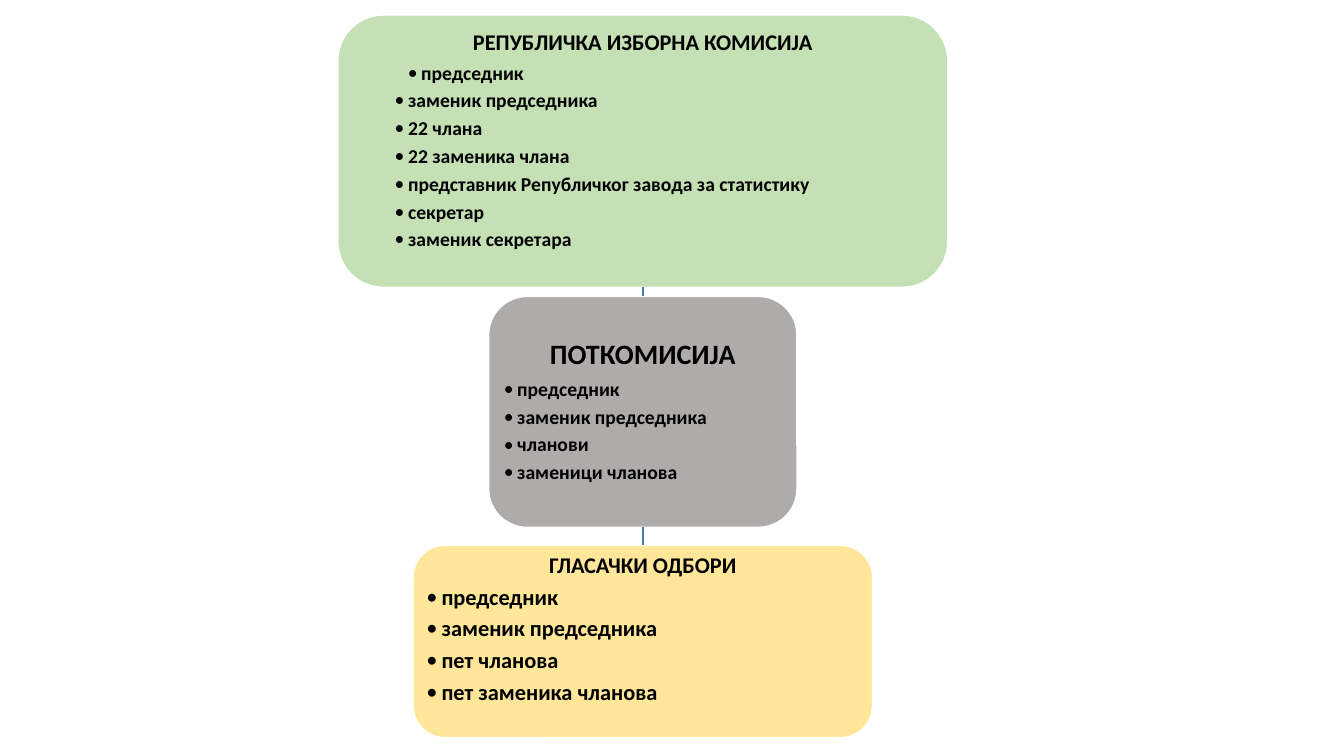
from dataclasses import dataclass
from pptx import Presentation
from pptx.dml.color import RGBColor
from pptx.enum.shapes import MSO_CONNECTOR as CONN, MSO_SHAPE as SHAPE
from pptx.enum.text import MSO_ANCHOR as ANCHOR, PP_ALIGN as ALIGN
from pptx.oxml.ns import qn
from pptx.util import Cm, Pt
from lxml.etree import SubElement


@dataclass(frozen=True)
class Theme:
    font: str = "Calibri"
    text: str = "000000"
    outline: str = "FFFFFF"
    link: str = "497CAB"
    commission: str = "C5E0B4"
    subcommission: str = "AFABAB"
    boards: str = "FFE699"
    small: int = 14
    medium: int = 16
    large: int = 20


THEME = Theme()
AXIS = 16.2  # shared centre line of the chart, in cm


def rgb(value):
    return RGBColor.from_string(value)


def format_paragraph(p, size, align):
    p.alignment = align
    p.line_spacing = 0.9
    p.space_after = Pt(round(size * 0.335, 1))
    for r in p.runs:
        r.font.name = THEME.font
        r.font.size = Pt(size)
        r.font.bold = True
        r.font.color.rgb = rgb(THEME.text)


def add_bullet(p, indent, size):
    """Hang a bullet at the indent (cm), one bullet and space wide."""
    hang = size * 0.024
    pPr = p._p.get_or_add_pPr()
    pPr.set("marL", str(Cm(indent + hang)))
    pPr.set("indent", str(-Cm(hang)))
    SubElement(pPr, qn("a:buFont")).set("typeface", THEME.font)
    SubElement(pPr, qn("a:buChar")).set("char", "•")


def add_body(s, box, fill, title, title_size, items, item_size, indents, bottom=0):
    """Draw one electoral body: a rounded box with its title and members."""
    top, width, height = box
    sp = s.shapes.add_shape(SHAPE.ROUNDED_RECTANGLE, Cm(AXIS - width / 2),
                            Cm(top), Cm(width), Cm(height))
    sp.shadow.inherit = False
    sp.fill.solid()
    sp.fill.fore_color.rgb = rgb(fill)
    sp.line.color.rgb = rgb(THEME.outline)
    sp.line.width = Pt(1)

    tf = sp.text_frame
    tf.word_wrap = True
    tf.vertical_anchor = ANCHOR.MIDDLE
    tf.margin_left = tf.margin_right = Cm(0.1)
    tf.margin_top, tf.margin_bottom = 0, Cm(bottom)
    tf.text = title
    format_paragraph(tf.paragraphs[0], title_size, ALIGN.CENTER)
    for item, indent in zip(items, indents):
        p = tf.add_paragraph()
        p.text = item
        format_paragraph(p, item_size, ALIGN.LEFT)
        add_bullet(p, indent, item_size)
    return sp


def link(s, upper, lower):
    c = s.shapes.add_connector(CONN.STRAIGHT, 0, 0, 0, 0)
    c.begin_connect(upper, 2)
    c.end_connect(lower, 0)
    c.line.color.rgb = rgb(THEME.link)
    c.line.width = Pt(1)
    SubElement(c._element.spPr, qn("a:effectLst"))


def add_hierarchy(s):
    commission = add_body(
        s, (0.38, 15.37, 6.86), THEME.commission,
        "РЕПУБЛИЧКА ИЗБОРНА КОМИСИЈА", THEME.medium,
        ["председник", "заменик председника", "22 члана", "22 заменика члана",
         "представник Републичког завода за статистику", "секретар",
         "заменик секретара"],
        THEME.small, [1.33] + [1] * 6, bottom=0.5)
    subcommission = add_body(
        s, (7.47, 7.77, 5.82), THEME.subcommission,
        "ПОТКОМИСИЈА", THEME.large,
        ["председник", "заменик председника", "чланови", "заменици чланова"],
        THEME.small, [0] * 4)
    boards = add_body(
        s, (13.74, 11.58, 4.85), THEME.boards,
        "ГЛАСАЧКИ ОДБОРИ", THEME.medium,
        ["председник", "заменик председника", "пет чланова",
         "пет заменика чланова"],
        THEME.medium, [0] * 4, bottom=0.6)
    link(s, commission, subcommission)
    link(s, subcommission, boards)


def main():
    prs = Presentation()
    prs.slide_width, prs.slide_height = Cm(33.87), Cm(19.05)
    add_hierarchy(prs.slides.add_slide(prs.slide_layouts[6]))
    prs.save("out.pptx")


if __name__ == "__main__":
    main()
